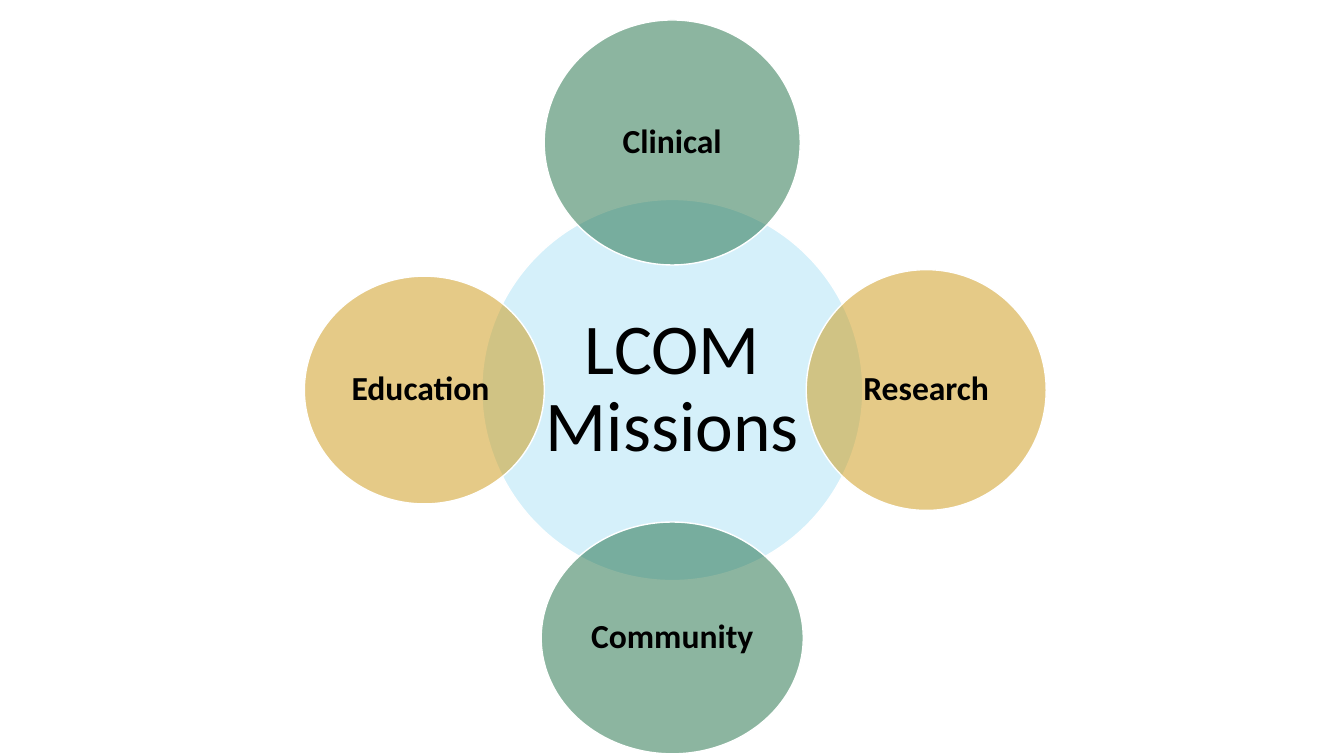
from pptx import Presentation
from pptx.dml.color import RGBColor
from pptx.enum import shapes, text
from pptx.oxml import parse_xml
from pptx.oxml.ns import nsdecls
from pptx.util import Pt

# Content: label, direction from the hub, distance, (width, height), colour
HUB = ("LCOM Missions", (0, 0), 0, (272.2, 272.2), "hub")
MISSIONS = [
    ("Clinical", (0, -1), 176.8, (182.9, 175), "green"),
    ("Research", (1, 0), 181.4, (171.4, 172), "gold"),
    ("Community", (0, 1), 177.1, (187.2, 165.6), "green"),
    ("Education ", (-1, 0), 177.1, (171.4, 162.7), "gold"),
]

THEME = {
    "font": "Calibri",
    "text": "000000",
    "outline": "FFFFFF",
    "hub": "ADE2F7",
    "green": "1A6C43",
    "gold": "CD9710",
    "opacity": 50,
    "hub_size": 51,
    "label_size": 24,
    "hub_inset": 5,
    "label_inset": 2.2,
}
PAGE_SIZE = (960, 540)
CENTER = (480.2, 278.6)


def color(name):
    return RGBColor.from_string(THEME[name])


def add_circle(page, label, direction, distance, size, fill, role):
    # Place the circle around its own centre
    left, top = (c + d * distance - s / 2
                 for c, d, s in zip(CENTER, direction, size))
    circle = page.shapes.add_shape(shapes.MSO_SHAPE.OVAL, Pt(left), Pt(top),
                                   Pt(size[0]), Pt(size[1]))
    circle.shadow.inherit = False
    circle.fill.solid()
    circle.fill.fore_color.rgb = color(fill)
    solid = circle._element.spPr.find(
        "{http://schemas.openxmlformats.org/drawingml/2006/main}solidFill")
    solid[0].append(parse_xml(
        f'<a:alpha {nsdecls("a")} val="{THEME["opacity"] * 1000}"/>'))
    circle.line.color.rgb = color("outline")
    circle.line.width = Pt(1)

    # Label inside the circle
    frame = circle.text_frame
    inset = Pt(THEME[role + "_inset"])
    frame_format = {
        "word_wrap": True,
        "vertical_anchor": text.MSO_ANCHOR.MIDDLE,
        "margin_left": inset, "margin_right": inset,
        "margin_top": inset, "margin_bottom": inset,
    }
    for name, value in frame_format.items():
        setattr(frame, name, value)
    para = frame.paragraphs[0]
    para.alignment = text.PP_ALIGN.CENTER
    para.line_spacing = 0.9
    span = para.add_run()
    span.text = label
    font_format = {"name": THEME["font"], "size": Pt(THEME[role + "_size"]),
                   "bold": role == "label"}
    for name, value in font_format.items():
        setattr(span.font, name, value)
    span.font.color.rgb = color("text")


def main():
    deck = Presentation()
    deck.slide_width, deck.slide_height = map(Pt, PAGE_SIZE)
    page = deck.slides.add_slide(deck.slide_layouts[6])

    # Hub first, so the missions overlap it
    add_circle(page, *HUB, role="hub")
    for mission in MISSIONS:
        add_circle(page, *mission, role="label")

    deck.save("out.pptx")


if __name__ == "__main__":
    main()
